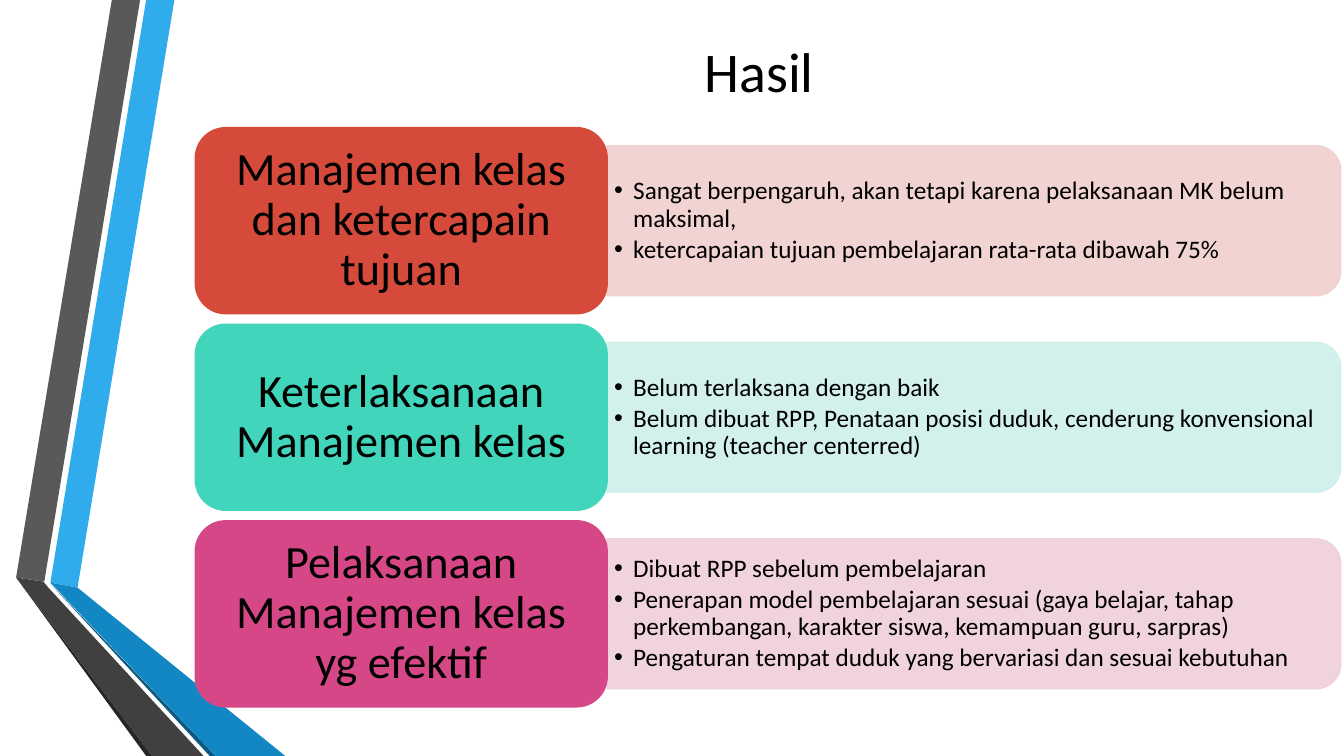
from lxml.etree import SubElement
from pptx import Presentation
from pptx.dml.color import RGBColor
from pptx.enum.shapes import MSO_SHAPE as Shape
from pptx.enum.text import MSO_ANCHOR as Anchor, PP_ALIGN as Align
from pptx.oxml.ns import qn
from pptx.util import Inches, Pt

COLORS = {
    "text": "000000",
    "blue": "30ACEC", "blue_mid": "1287C3", "blue_dark": "0C5A82",
    "gray": "595959", "gray_mid": "404040", "gray_dark": "262626",
    "red": "D64A3B", "red_pale": "F0D0CE",
    "teal": "41D6BC", "teal_pale": "CFF0EB",
    "pink": "D64787", "pink_pale": "F0CFDA",
}

RIBBONS = [
    ("blue", [(0.5, 5.78), (0.77, 5.83), (1.73, 0), (1.45, 0)]),
    ("gray", [(1.39, 0), (1.11, 0), (0.16, 5.73), (0.44, 5.77)]),
    ("gray_dark", [(0.16, 5.73), (1.45, 7.5), (1.51, 7.5)]),
    ("blue_dark", [(0.5, 5.79), (2.08, 7.5), (2.14, 7.5)]),
    ("blue_mid", [(0.5, 5.78), (2.14, 7.5), (2.83, 7.5), (0.77, 5.83)]),
    ("gray_mid", [(2.02, 7.5), (0.48, 5.83), (0.43, 5.77), (0.16, 5.73), (1.51, 7.5)]),
]

ROWS = [
    ("red", "Manajemen kelas dan ketercapain tujuan", [
        "Sangat berpengaruh, akan tetapi karena pelaksanaan MK belum maksimal,",
        "ketercapaian tujuan pembelajaran rata-rata dibawah 75%",
    ]),
    ("teal", "Keterlaksanaan Manajemen kelas", [
        "Belum terlaksana dengan baik",
        "Belum dibuat RPP, Penataan posisi duduk, cenderung konvensional learning "
        "(teacher centerred)",
    ]),
    ("pink", "Pelaksanaan Manajemen kelas yg efektif", [
        "Dibuat RPP sebelum pembelajaran",
        "Penerapan model pembelajaran sesuai (gaya belajar, tahap perkembangan, "
        "karakter siswa, kemampuan guru, sarpras)",
        "Pengaturan tempat duduk yang bervariasi dan sesuai kebutuhan",
    ]),
]
FIRST_CENTER, ROW_PITCH = 2.19, 1.95
LABEL_LEFT, LABEL_WIDTH, LABEL_HEIGHT = 1.93, 4.1, 1.86
PANEL_LEFT, PANEL_WIDTH, PANEL_HEIGHT = 6.02, 7.28, 1.49
LIST_WIDTH, LIST_HEIGHT = 7.21, 1.34


class SlideBuilder:
    def __init__(self, slide, font="Calibri"):
        self.slide = slide
        self.font = font

    def color(self, name):
        return RGBColor.from_string(COLORS[name])

    def paint(self, shape, fill):
        shape.shadow.inherit = False
        shape.fill.solid()
        shape.fill.fore_color.rgb = self.color(fill)
        shape.line.fill.background()

    def ribbon(self, fill, points):
        start, *others = [(Inches(x), Inches(y)) for x, y in points]
        builder = self.slide.shapes.build_freeform(*start)
        builder.add_line_segments(others, close=True)
        self.paint(builder.convert_to_shape(), fill)

    def frame(self, shape, inset_x, inset_y):
        frame = shape.text_frame
        frame.word_wrap = True
        frame.vertical_anchor = Anchor.MIDDLE
        frame.margin_left = frame.margin_right = Inches(inset_x)
        frame.margin_top = frame.margin_bottom = Inches(inset_y)
        return frame

    def add_text(self, paragraph, text, size, align=Align.CENTER, spacing=0.9):
        paragraph.alignment = align
        paragraph.line_spacing = spacing
        run = paragraph.add_run()
        run.text = text
        run.font.name = self.font
        run.font.size = Pt(size)
        run.font.color.rgb = self.color("text")

    def text_box(self, left, top, width, height):
        return self.slide.shapes.add_textbox(
            Inches(left), Inches(top), Inches(width), Inches(height))

    def title(self, text):
        frame = self.frame(self.text_box(2.05, 0.32, 10.96, 0.84), 0.1, 0.05)
        self.add_text(frame.paragraphs[0], text, 40)

    def panel(self, center, fill):
        """Pale bar, turned so that its two rounded corners face right."""
        shape = self.slide.shapes.add_shape(
            Shape.ROUND_2_SAME_RECTANGLE,
            Inches(PANEL_LEFT + (PANEL_WIDTH - PANEL_HEIGHT) / 2),
            Inches(center - PANEL_WIDTH / 2),
            Inches(PANEL_HEIGHT), Inches(PANEL_WIDTH))
        shape.rotation = 90
        self.paint(shape, fill)
        shape.line.color.rgb = self.color(fill)
        shape.line.width = Pt(0.75)
        for color in shape._element.spPr.iter(qn("a:srgbClr")):
            SubElement(color, qn("a:alpha"), val="90000")

    def bullets(self, center, items):
        box = self.text_box(PANEL_LEFT, center - LIST_HEIGHT / 2, LIST_WIDTH, LIST_HEIGHT)
        frame = self.frame(box, 0.07, 0.04)
        for index, item in enumerate(items):
            paragraph = frame.add_paragraph() if index else frame.paragraphs[0]
            self.add_text(paragraph, item, 18, Align.LEFT)
            paragraph.space_after = Pt(2.7)
            properties = paragraph._p.get_or_add_pPr()
            properties.set("marL", str(Inches(0.19)))
            properties.set("indent", str(-Inches(0.19)))
            SubElement(properties, qn("a:buFont"), typeface="Arial")
            SubElement(properties, qn("a:buChar"), char="•")

    def label(self, center, fill, text):
        shape = self.slide.shapes.add_shape(
            Shape.ROUNDED_RECTANGLE, Inches(LABEL_LEFT), Inches(center - LABEL_HEIGHT / 2),
            Inches(LABEL_WIDTH), Inches(LABEL_HEIGHT))
        self.paint(shape, fill)
        self.add_text(self.frame(shape, 0.14, 0.07).paragraphs[0], text, 33)


def main():
    presentation = Presentation()
    presentation.slide_width = Inches(13.33)
    presentation.slide_height = Inches(7.5)
    builder = SlideBuilder(presentation.slides.add_slide(presentation.slide_layouts[6]))

    for fill, points in RIBBONS:
        builder.ribbon(fill, points)
    builder.title("Hasil")
    for index, (color, label, items) in enumerate(ROWS):
        center = FIRST_CENTER + index * ROW_PITCH
        builder.panel(center, color + "_pale")
        builder.bullets(center, items)
        builder.label(center, color, label)

    presentation.save("out.pptx")


if __name__ == "__main__":
    main()
